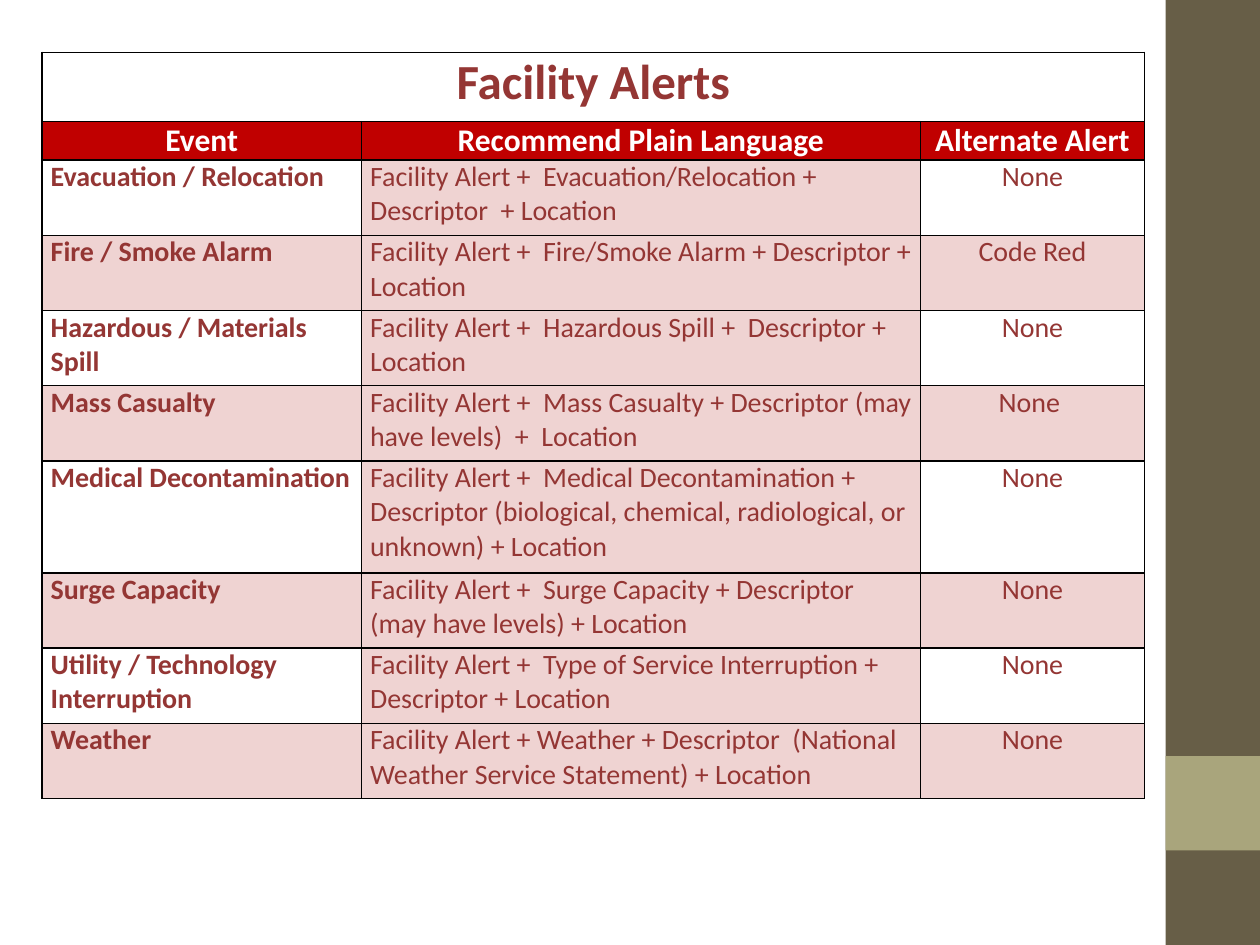
"""Build the Facility Alerts slide: a table of events beside a side band."""
import pptx
import pptx.dml.color
import pptx.enum.shapes
import pptx.enum.text
import pptx.oxml
import pptx.oxml.ns
import pptx.util

Pt = pptx.util.Pt
RGB = pptx.dml.color.RGBColor
ALIGN = pptx.enum.text.PP_ALIGN

OLIVE = RGB(0x67, 0x5E, 0x47)
SAGE = RGB(0xA9, 0xA5, 0x7C)
RED = RGB(0xC0, 0x00, 0x00)
PINK = RGB(0xEF, 0xD3, 0xD2)
MAROON = RGB(0x94, 0x36, 0x34)
WHITE = RGB(0xFF, 0xFF, 0xFF)

HEADS = ["Event", "Recommend Plain Language", "Alternate Alert"]
ALERTS = [
    ("Evacuation / Relocation",
     "Facility Alert +  Evacuation/Relocation +  Descriptor  + Location", "None"),
    ("Fire / Smoke Alarm",
     "Facility Alert +  Fire/Smoke Alarm + Descriptor + Location", "Code Red"),
    ("Hazardous / Materials Spill",
     "Facility Alert +  Hazardous Spill +  Descriptor + Location", "None"),
    ("Mass Casualty",
     "Facility Alert +  Mass Casualty + Descriptor (may have levels)  +  Location", "None "),
    ("Medical Decontamination",
     "Facility Alert +  Medical Decontamination +  Descriptor "
     "(biological, chemical, radiological, or unknown) + Location", "None"),
    ("Surge Capacity",
     "Facility Alert +  Surge Capacity + Descriptor (may have levels) + Location", "None"),
    ("Utility / Technology Interruption",
     "Facility Alert +  Type of Service Interruption + Descriptor + Location", "None"),
    ("Weather",
     "Facility Alert + Weather + Descriptor  (National Weather Service Statement) + Location",
     "None"),
]
WIDTHS = [182.5, 319.5, 128]
HEIGHTS = [39.5, 22] + [43] * 4 + [64] + [43] * 3


def write(cell, text, size=16, bold=False, color=MAROON, align=ALIGN.CENTER, fill=None):
    cell.margin_left = cell.margin_right = Pt(5)
    cell.margin_top = cell.margin_bottom = 0
    if fill is None:
        cell.fill.background()
    else:
        cell.fill.solid()
        cell.fill.fore_color.rgb = fill
    para = cell.text_frame.paragraphs[0]
    para.alignment = align
    run = para.add_run()
    run.text = text
    run.font.name = "Calibri"
    run.font.size = Pt(size)
    run.font.bold = bold
    run.font.color.rgb = color


def border(cell):
    for side in ("lnL", "lnR", "lnT", "lnB"):
        cell._tc.get_or_add_tcPr().append(pptx.oxml.parse_xml(
            f'<a:{side} {pptx.oxml.ns.nsdecls("a")} w="{Pt(1)}"><a:solidFill>'
            f'<a:srgbClr val="000000"/></a:solidFill></a:{side}>'))


deck = pptx.Presentation()
deck.slide_width, deck.slide_height = Pt(720), Pt(540)
slide = deck.slides.add_slide(deck.slide_layouts[6])

for top, height, color in [(0, 540, OLIVE), (432, 54, SAGE)]:
    band = slide.shapes.add_shape(
        pptx.enum.shapes.MSO_SHAPE.RECTANGLE, Pt(666), Pt(top), Pt(54), Pt(height))
    band.shadow.inherit = False
    band.fill.solid()
    band.fill.fore_color.rgb = color
    band.line.fill.background()

table = slide.shapes.add_table(
    len(HEIGHTS), len(WIDTHS), Pt(24), Pt(30), Pt(sum(WIDTHS)), Pt(sum(HEIGHTS))).table
table.first_row = table.horz_banding = False
for col, width in zip(table.columns, WIDTHS):
    col.width = Pt(width)
for row, height in zip(table.rows, HEIGHTS):
    row.height = Pt(height)
for cell in table.iter_cells():
    border(cell)

title = table.cell(0, 0)
title.merge(table.cell(0, 2))
write(title, "Facility Alerts", size=28, bold=True)
for col, head in enumerate(HEADS):
    write(table.cell(1, col), head, size=18, bold=True, color=WHITE, fill=RED)
for index, (event, phrase, code) in enumerate(ALERTS):
    row = index + 2
    shade = PINK if index % 2 else None
    write(table.cell(row, 0), event, bold=True, align=ALIGN.LEFT, fill=shade)
    write(table.cell(row, 1), phrase, align=ALIGN.LEFT, fill=PINK)
    write(table.cell(row, 2), code, fill=shade)

deck.save("out.pptx")
